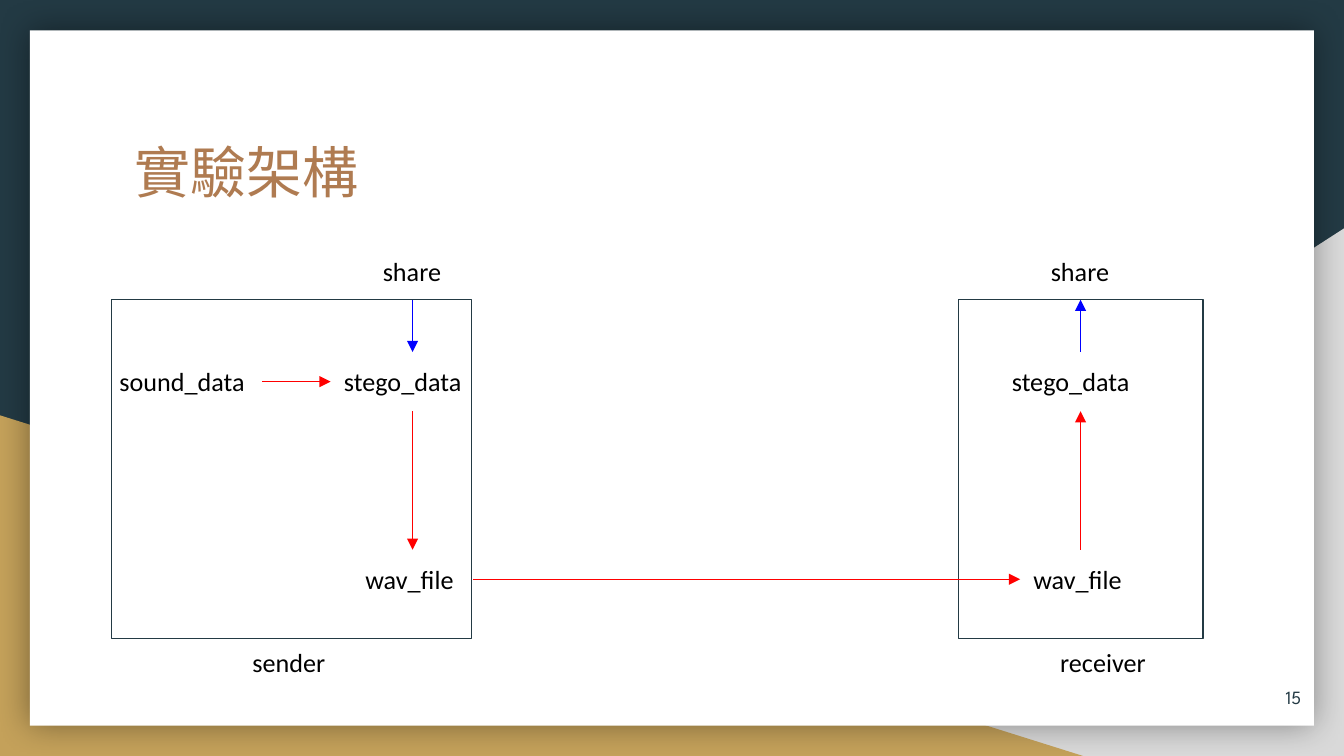
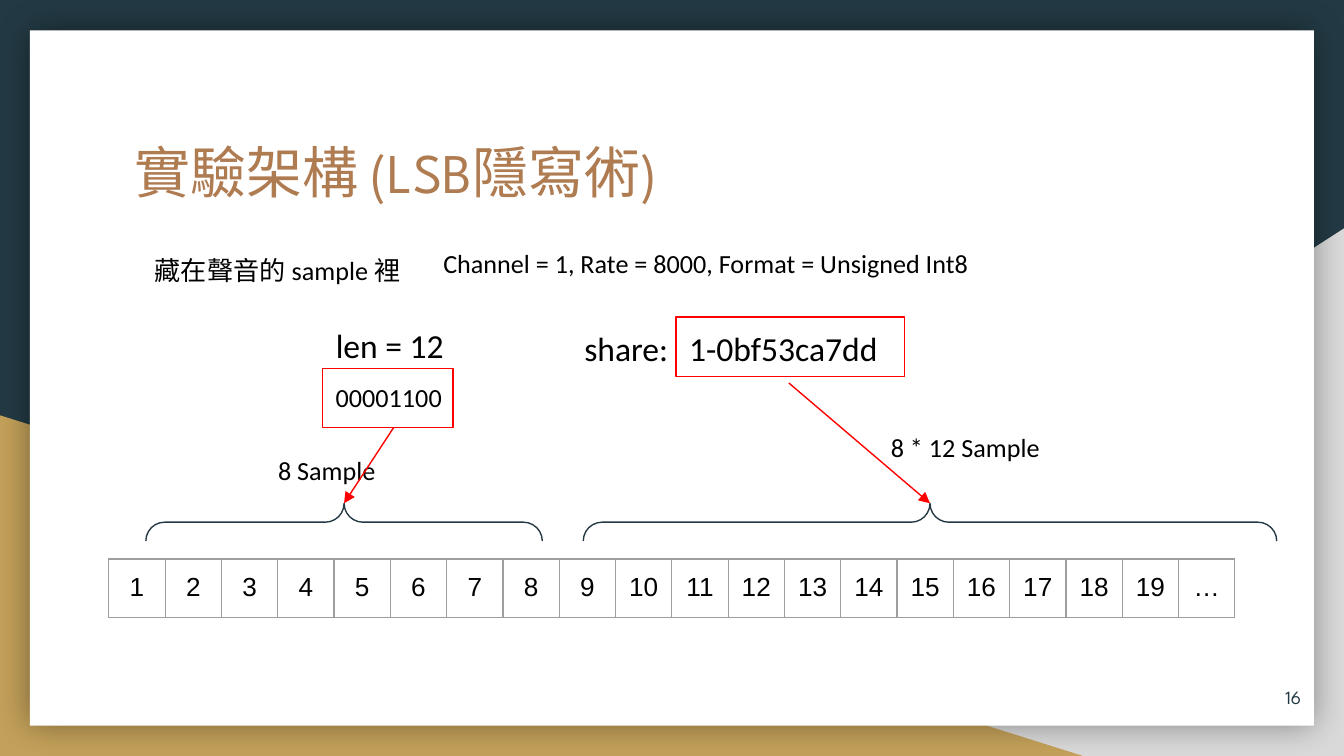
import pptx
import pptx.dml.color
import pptx.enum.shapes
import pptx.enum.text
import pptx.oxml
import pptx.oxml.ns
import pptx.util
import lxml.etree

SHAPE = pptx.enum.shapes.MSO_SHAPE
ALIGN = pptx.enum.text.PP_ALIGN
ANCHOR = pptx.enum.text.MSO_ANCHOR
NAMESPACE = pptx.oxml.ns.nsdecls("a")

# Grid of the slide: every length below is in columns and rows
COLUMNS, ROWS = 100, 56.25
LABEL_HEIGHT = 4.4
COLORS = {
    "navy": "233A44", "gold": "C4A15A", "gray": "D9D9D9", "white": "FFFFFF",
    "bronze": "AF7B51", "black": "000000", "red": "FF0000", "blue": "0000FF",
    "border": "9E9E9E",
}


class Deck:
    """Holds the style, the presentation and the current slide."""

    heading_font, body_font, table_font = "League Spartan", "Calibri", "Arial"
    line_width = pptx.util.Pt(0.75)

    def __init__(self):
        self.presentation = pptx.Presentation()
        self.presentation.slide_width = pptx.util.Inches(10)
        self.presentation.slide_height = pptx.util.Inches(5.625)
        self.slide = None

    # Helpers
    def x(self, columns):
        return round(self.presentation.slide_width * columns / COLUMNS)

    def y(self, rows):
        return round(self.presentation.slide_height * rows / ROWS)

    def box(self, left, top, width, height):
        return self.x(left), self.y(top), self.x(width), self.y(height)

    def color(self, name):
        return pptx.dml.color.RGBColor.from_string(COLORS[name])

    def fill_text(self, text_frame, text, size, font, color, align):
        text_frame.text = text
        paragraph = text_frame.paragraphs[0]
        paragraph.alignment = align
        for run in paragraph.runs:
            run.font.size = pptx.util.Pt(size)
            run.font.name = font
            run.font.color.rgb = self.color(color)

    def set_margins(self, target):
        target.margin_left = target.margin_right = self.x(1)
        target.margin_top = target.margin_bottom = self.y(1)

    # Elements
    def shape(self, kind, left, top, width, height, fill=None, line=None):
        shape = self.slide.shapes.add_shape(kind, *self.box(left, top, width, height))
        shape.shadow.inherit = False
        if fill:
            shape.fill.solid()
            shape.fill.fore_color.rgb = self.color(fill)
        else:
            shape.fill.background()
        if line:
            shape.line.color.rgb = self.color(line)
            shape.line.width = self.line_width
        else:
            shape.line.fill.background()
        return shape

    def text(self, text, left, top, width, height=LABEL_HEIGHT, size=14,
             font=body_font, color="black", align=ALIGN.LEFT, anchor=ANCHOR.TOP):
        text_box = self.slide.shapes.add_textbox(*self.box(left, top, width, height))
        text_frame = text_box.text_frame
        text_frame.word_wrap = True
        text_frame.vertical_anchor = anchor
        self.set_margins(text_frame)
        self.fill_text(text_frame, text, size, font, color, align)

    def arrow(self, start, end, color="red"):
        connector = self.slide.shapes.add_connector(
            pptx.enum.shapes.MSO_CONNECTOR.STRAIGHT,
            self.x(start[0]), self.y(start[1]), self.x(end[0]), self.y(end[1]))
        connector.line.color.rgb = self.color(color)
        connector.line.width = self.line_width
        properties = connector.element.spPr
        line = properties.find(pptx.oxml.ns.qn("a:ln"))
        line.append(pptx.oxml.parse_xml(f'<a:tailEnd {NAMESPACE} type="triangle"/>'))
        properties.append(pptx.oxml.parse_xml(f"<a:effectLst {NAMESPACE}/>"))

    def brace(self, center, top, length, depth=2.8):
        """Brace that opens downwards, with its tip at (center, top)."""
        middle = top + depth / 2
        shape = self.shape(SHAPE.RIGHT_BRACE, center - depth / 2, middle - length / 2,
                           depth, length, line="navy")
        shape.rotation = 270
        shape.adjustments[0] = shape.adjustments[1] = 0.5

    def row_of_cells(self, values, left, top, cell_width, cell_height):
        frame = self.slide.shapes.add_table(
            1, len(values),
            *self.box(left, top, cell_width * len(values), cell_height))
        table = frame.table
        table.first_row = table.horz_banding = False
        for index, value in enumerate(values):
            table.columns[index].width = self.x(cell_width)
            cell = table.cell(0, index)
            self.set_margins(cell)
            self.fill_text(cell.text_frame, value, 14, self.table_font, "black",
                           ALIGN.CENTER)
            self.outline_cell(cell)
            cell.fill.background()

    def outline_cell(self, cell):
        properties = cell._tc.get_or_add_tcPr()
        for side in ("lnL", "lnR", "lnT", "lnB"):
            properties.append(pptx.oxml.parse_xml(
                f'<a:{side} {NAMESPACE} w="{int(self.line_width)}"><a:solidFill>'
                f'<a:srgbClr val="{COLORS["border"]}"/></a:solidFill></a:{side}>'))

    # Shared look of every slide
    def start_slide(self, title, number):
        self.slide = self.presentation.slides.add_slide(
            self.presentation.slide_layouts[6])
        background = self.slide.background.fill
        background.solid()
        background.fore_color.rgb = self.color("navy")
        corner = self.shape(SHAPE.RIGHT_TRIANGLE, 39.2, 17, 60.8, 39.25, fill="gray")
        corner.element.spPr.xfrm.set("flipH", "1")
        self.shape(SHAPE.RIGHT_TRIANGLE, 0, 30.9, 80.6, 25.35, fill="gold")
        self.panel()
        self.text(title, 9, 9.2, 82.1, 10.4, size=30, font=self.heading_font,
                  color="bronze")
        self.text(str(number), 91.8, 49.7, 6, 4.3, size=10, font=self.heading_font,
                  color="navy", align=ALIGN.RIGHT, anchor=ANCHOR.MIDDLE)

    def panel(self):
        panel = self.shape(SHAPE.RECTANGLE, 2.23, 2.25, 95.54, 51.75, fill="white")
        effects = panel.element.spPr.find(pptx.oxml.ns.qn("a:effectLst"))
        shadow = lxml.etree.SubElement(
            effects, pptx.oxml.ns.qn("a:outerShdw"),
            blurRad=str(int(pptx.util.Pt(18))), dist="0", dir="0",
            algn="ctr", rotWithShape="0")
        color = lxml.etree.SubElement(
            shadow, pptx.oxml.ns.qn("a:srgbClr"), val=COLORS["black"])
        lxml.etree.SubElement(color, pptx.oxml.ns.qn("a:alpha"), val="40000")


def build_architecture(deck):
    deck.start_slide("實驗架構", 15)
    box_top, box_height = 22.3, 25.2
    stego_top, wav_top = 26.2, 40.9
    stego_bottom = stego_top + LABEL_HEIGHT
    sender_axis, receiver_axis = 30.7, 80.4

    # Sender and receiver boxes
    for name, left, width, name_left in (("sender", 8.3, 26.8, 17.8),
                                         ("receiver", 71.3, 18.2, 77.9)):
        deck.shape(SHAPE.RECTANGLE, left, box_top, width, box_height, line="navy")
        deck.text(name, name_left, 47.1, 8.6)

    # The same three stages on both sides
    for axis in (sender_axis, receiver_axis):
        deck.text("share", axis - 4, 18, 7.9, align=ALIGN.CENTER)
        deck.text("stego_data", axis - 6.1, stego_top, 12.1)
        deck.text("wav_file", axis - 4.5, wav_top, 9)

    # Embedding goes down, extraction goes up
    for start, end, color in ((box_top, stego_top, "blue"),
                              (stego_bottom, wav_top, "red")):
        deck.arrow((sender_axis, start), (sender_axis, end), color)
        deck.arrow((receiver_axis, end), (receiver_axis, start), color)

    # Sound input and file transfer
    deck.text("sound_data", 7.9, stego_top, 11.6)
    stego_middle = stego_top + LABEL_HEIGHT / 2
    wav_middle = wav_top + LABEL_HEIGHT / 2
    deck.arrow((19.5, stego_middle), (sender_axis - 6.1, stego_middle))
    deck.arrow((sender_axis + 4.5, wav_middle), (receiver_axis - 4.5, wav_middle))


def build_steganography(deck):
    deck.start_slide("實驗架構 (LSB隱寫術)", 16)

    # Audio format
    deck.text("藏在聲音的 sample 裡", 9.8, 17.9, 21.7, align=ALIGN.CENTER)
    deck.text("Channel = 1, Rate = 8000, Format = Unsigned Int8", 32, 17.4, 45)

    # Length and share values
    deck.text("len = 12", 24, 23.2, 11.8, 5, size=18)
    deck.text("00001100", 24, 27.4, 10.6)
    deck.shape(SHAPE.RECTANGLE, 24, 27.4, 9.7, LABEL_HEIGHT, line="red")
    deck.text("share:", 42.3, 23.4, 8.6, 5, size=18, align=ALIGN.CENTER)
    deck.text("1-0bf53ca7dd", 50.3, 23.4, 17, 5, size=18)
    deck.shape(SHAPE.RECTANGLE, 50.3, 23.6, 17, LABEL_HEIGHT, line="red")

    # Samples that carry each value
    deck.text("8 Sample", 19.7, 32.8, 11.8)
    deck.text("8 * 12 Sample", 65.3, 31.1, 15.3)
    brace_top = 37.45
    for center, length, start in ((25.6, 29.5, (29.3, 31.8)),
                                  (69.2, 51.6, (58.7, 28.5))):
        deck.brace(center, brace_top, length)
        deck.arrow(start, (center, brace_top))
    samples = [str(number) for number in range(1, 20)] + ["…"]
    deck.row_of_cells(samples, 8.1, 41.6, 4.19, 4.3)


def main():
    deck = Deck()
    build_architecture(deck)
    build_steganography(deck)
    deck.presentation.save("out.pptx")


if __name__ == "__main__":
    main()
